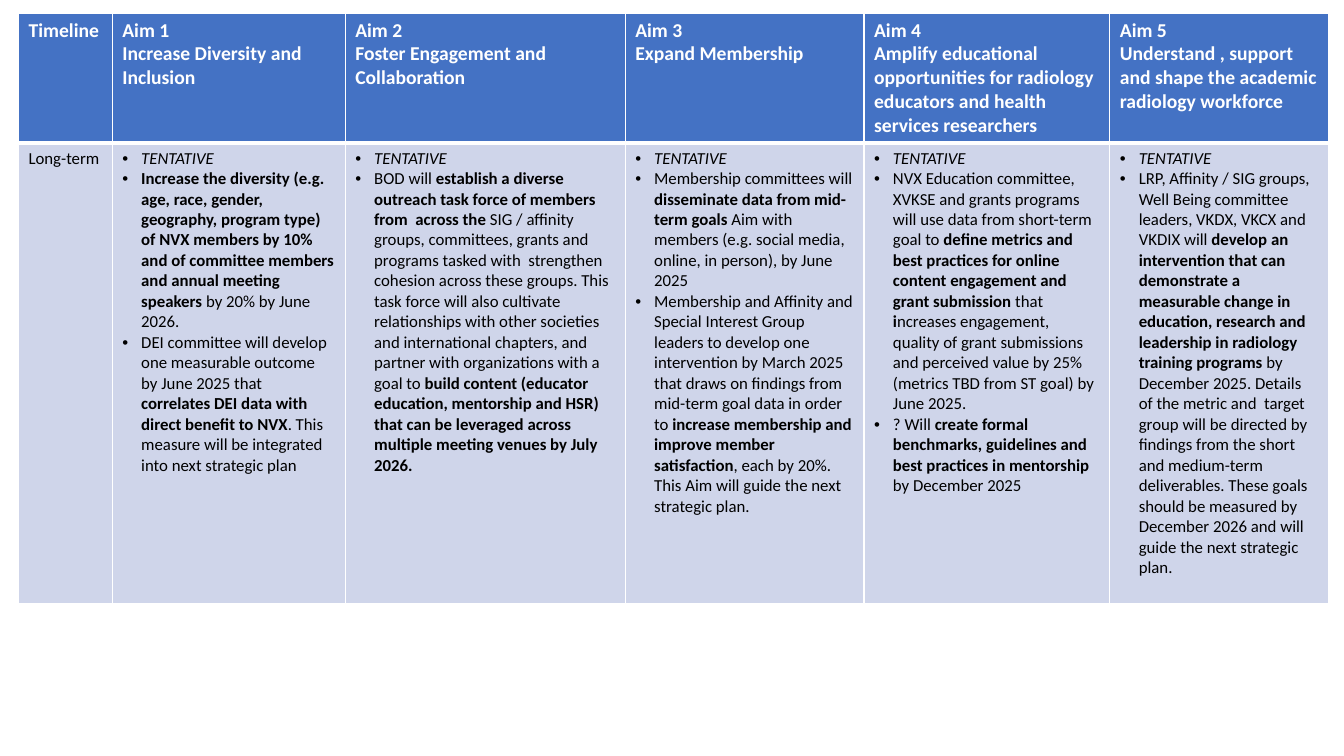
"""Build the slide with the long-term goals for five strategic aims."""
from pptx import Presentation
from pptx import util as u
from pptx.dml.color import RGBColor
from pptx.oxml.ns import qn
from lxml import etree

Pt = u.Pt
WHITE = RGBColor(0xFF, 0xFF, 0xFF)
BLACK = RGBColor(0, 0, 0)
BLUE = RGBColor(0x44, 0x72, 0xC4)
PALE_BLUE = RGBColor(0xCF, 0xD5, 0xEA)
FONT = "Calibri"
BOLD_MARK = "**"
TENTATIVE = "TENTATIVE"

ROW_LABELS = ("Timeline", "Long-term")
AIMS = [
    ("Increase Diversity and Inclusion", [
        "**Increase the diversity (e.g. age, race, gender, geography, program type) of NVX members "
        "by 10% and of committee members and annual meeting speakers **by 20% by June 2026.",
        "DEI committee will develop one measurable outcome by June 2025 that **correlates DEI data "
        "with direct benefit to NVX**. This measure will be integrated into next strategic plan",
    ]),
    ("Foster Engagement and Collaboration", [
        "BOD will **establish a diverse outreach task force of members from  across the **SIG / "
        "affinity groups, committees, grants and programs tasked with  strengthen cohesion across "
        "these groups. This task force will also cultivate relationships with other societies and "
        "international chapters, and partner with organizations with a goal to **build content "
        "(educator education, mentorship and HSR) that can be leveraged across multiple meeting "
        "venues by July 2026.",
    ]),
    ("Expand Membership", [
        "Membership committees will **disseminate data from mid-term goals** Aim with members "
        "(e.g. social media, online, in person), by June 2025",
        "Membership and Affinity and Special Interest Group leaders to develop one intervention by "
        "March 2025 that draws on findings from mid-term goal data in order to **increase "
        "membership and improve member satisfaction**, each by 20%. This Aim will guide the next "
        "strategic plan.",
    ]),
    ("Amplify educational opportunities for radiology educators and health services researchers", [
        "NVX Education committee, XVKSE and grants programs will use data from short-term goal to "
        "**define metrics and best practices for online content engagement and grant submission "
        "**that **i**ncreases engagement, quality of grant submissions and perceived value by 25% "
        "(metrics TBD from ST goal) by June 2025.",
        "? Will **create formal benchmarks, guidelines and best practices in mentorship **by "
        "December 2025",
    ]),
    ("Understand , support and shape the academic radiology workforce", [
        "LRP, Affinity / SIG groups, Well Being committee leaders, VKDX, VKCX and VKDIX will "
        "**develop an intervention that can demonstrate a measurable change in education, research "
        "and leadership in radiology training programs **by December 2025. Details of the metric "
        "and  target group will be directed by findings from the short and medium-term "
        "deliverables. These goals should be measured by December 2026 and will guide the next "
        "strategic plan.",
    ]),
]

SLIDE_SIZE = (960, 540)
TABLE_LEFT, TABLE_TOP = 13.2, 9.6
COLUMN_WIDTHS = (67, 166.4, 200, 170.6, 175.6, 156)
ROW_HEIGHTS = (92.6, 329)
BULLET_INDENT = 13.5
THIN, THICK = 1, 3


def add_border(properties, side, width):
    """Add one white edge to a cell."""
    line = etree.SubElement(properties, qn(f"a:ln{side}"), w=str(Pt(width)))
    fill = etree.SubElement(line, qn("a:solidFill"))
    etree.SubElement(fill, qn("a:srgbClr"), val=str(WHITE))


def style_cell(cell, is_header):
    """Set the edges and the fill of a cell."""
    properties = cell._tc.get_or_add_tcPr()
    widths = {"L": THIN, "R": THIN, "T": THIN if is_header else THICK, "B": THICK if is_header else THIN}
    for side, width in widths.items():
        add_border(properties, side, width)
    cell.fill.solid()
    cell.fill.fore_color.rgb = BLUE if is_header else PALE_BLUE


def add_bullet(paragraph):
    """Give a paragraph a hanging bullet."""
    properties = paragraph._p.get_or_add_pPr()
    properties.set("marL", str(Pt(BULLET_INDENT)))
    properties.set("indent", str(-Pt(BULLET_INDENT)))
    etree.SubElement(properties, qn("a:buFont"), typeface="Arial")
    etree.SubElement(properties, qn("a:buChar"), char="•")


def fill_cell(cell, lines, is_header, bulleted=False):
    """Write the lines into a cell, one paragraph each."""
    style_cell(cell, is_header)
    frame = cell.text_frame
    for number, line in enumerate(lines):
        paragraph = frame.add_paragraph() if number else frame.paragraphs[0]
        if bulleted:
            add_bullet(paragraph)
        for position, piece in enumerate(line.split(BOLD_MARK)):
            if not piece:
                continue
            run = paragraph.add_run()
            run.text = piece
            run.font.name = FONT
            run.font.size = Pt(14 if is_header else 12)
            run.font.bold = is_header or position % 2 == 1
            run.font.italic = line == TENTATIVE
            run.font.color.rgb = WHITE if is_header else BLACK


def main():
    """Create and save the presentation."""
    presentation = Presentation()
    presentation.slide_width, presentation.slide_height = map(Pt, SLIDE_SIZE)
    slide = presentation.slides.add_slide(presentation.slide_layouts[6])
    table = slide.shapes.add_table(
        len(ROW_HEIGHTS), len(COLUMN_WIDTHS), Pt(TABLE_LEFT), Pt(TABLE_TOP),
        Pt(sum(COLUMN_WIDTHS)), Pt(sum(ROW_HEIGHTS))).table
    for column, width in zip(table.columns, COLUMN_WIDTHS):
        column.width = Pt(width)
    for row, height in zip(table.rows, ROW_HEIGHTS):
        row.height = Pt(height)
    for row_index, label in enumerate(ROW_LABELS):
        fill_cell(table.cell(row_index, 0), [label], row_index == 0)
    for number, (title, goals) in enumerate(AIMS, 1):
        fill_cell(table.cell(0, number), [f"Aim {number}", title], True)
        fill_cell(table.cell(1, number), [TENTATIVE, *goals], False, bulleted=True)
    presentation.save("out.pptx")


if __name__ == "__main__":
    main()
